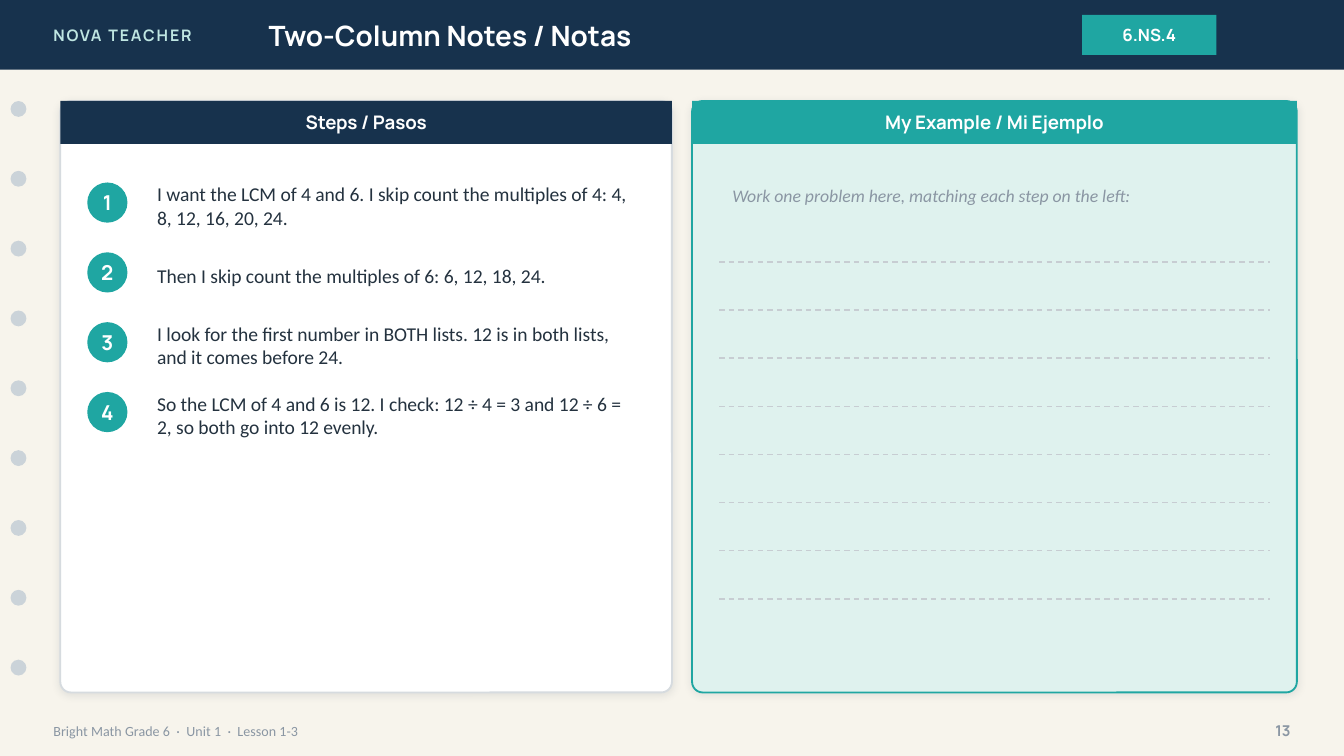
from lxml.etree import SubElement
from pptx import Presentation
from pptx.dml.color import RGBColor
from pptx.enum.dml import MSO_LINE
from pptx.enum.shapes import MSO_CONNECTOR, MSO_SHAPE
from pptx.enum.text import MSO_ANCHOR, PP_ALIGN
from pptx.oxml.ns import qn
from pptx.util import Cm, Pt

NAVY, TEAL, MINT, WHITE = "17324D", "1FA6A2", "DFF2EE", "FFFFFF"
GREY, INK, RULE = "8A96A3", "24323F", "C7CDD2"
HEAD, BODY = "Manrope", "Calibri"

STEPS = [
    "I want the LCM of 4 and 6. I skip count the multiples of 4: 4, 8, 12, 16, 20, 24.",
    "Then I skip count the multiples of 6: 6, 12, 18, 24.",
    "I look for the first number in BOTH lists. 12 is in both lists, and it comes before 24.",
    "So the LCM of 4 and 6 is 12. I check: 12 ÷ 4 = 3 and 12 ÷ 6 = 2, so both go into 12 evenly.",
]


def rgb(value):
    return RGBColor.from_string(value)


class NotesSlide:
    """Draws on one slide; all positions and sizes are in centimetres."""

    def __init__(self, prs, background):
        self.s = prs.slides.add_slide(prs.slide_layouts[6])
        fill = self.s.background.fill
        fill.solid()
        fill.fore_color.rgb = rgb(background)

    def set_text(self, sp, text, size, color, font=HEAD, bold=True, italic=False,
                 align=PP_ALIGN.LEFT):
        tf = sp.text_frame
        tf.word_wrap = True
        tf.vertical_anchor = MSO_ANCHOR.MIDDLE
        p = tf.paragraphs[0]
        p.text = text
        p.alignment = align
        p.font.name, p.font.size = font, Pt(size)
        p.font.bold, p.font.italic = bold, italic
        p.font.color.rgb = rgb(color)
        return p

    def text(self, x, y, w, h, text, size, color, **style):
        sp = self.s.shapes.add_textbox(Cm(x), Cm(y), Cm(w), Cm(h))
        return self.set_text(sp, text, size, color, **style)

    def shape(self, kind, x, y, w, h, fill, line=None):
        sp = self.s.shapes.add_shape(kind, Cm(x), Cm(y), Cm(w), Cm(h))
        sp.shadow.inherit = False
        sp.fill.solid()
        sp.fill.fore_color.rgb = rgb(fill)
        if line:
            sp.line.color.rgb = rgb(line)
            sp.line.width = Pt(1)
        else:
            sp.line.fill.background()
        return sp

    def label(self, x, y, w, h, fill, text, size, kind=MSO_SHAPE.RECTANGLE):
        """Filled shape with centred white text."""
        sp = self.shape(kind, x, y, w, h, fill)
        self.set_text(sp, text, size, WHITE, align=PP_ALIGN.CENTER)
        tf = sp.text_frame
        tf.margin_left = tf.margin_right = tf.margin_top = tf.margin_bottom = 0

    def soft_shadow(self, sp):
        effects = sp._element.spPr.find(qn("a:effectLst"))
        shadow = SubElement(effects, qn("a:outerShdw"), blurRad=str(Pt(4)),
                            dist=str(Pt(1)), dir="5400000", algn="bl", rotWithShape="0")
        color = SubElement(shadow, qn("a:srgbClr"), val="1C2E42")
        SubElement(color, qn("a:alpha"), val="10000")

    def card(self, x, w, fill, line, header_fill, title):
        top = 1.91
        sp = self.shape(MSO_SHAPE.ROUNDED_RECTANGLE, x, top, w, 11.18, fill, line)
        sp.adjustments[0] = 0.018
        self.soft_shadow(sp)
        self.label(x, top, w, 0.81, header_fill, title, 10)

    def step(self, y, number, text):
        self.label(1.65, y, 0.76, 0.76, TEAL, str(number), 11, MSO_SHAPE.OVAL)
        self.text(2.72, y - 0.15, 9.6, 1.17, text, 10.5, INK, font=BODY, bold=False)

    def writing_line(self, x1, x2, y):
        line = self.s.shapes.add_connector(MSO_CONNECTOR.STRAIGHT, Cm(x1), Cm(y), Cm(x2), Cm(y))
        line.line.color.rgb = rgb(RULE)
        line.line.width = Pt(0.75)
        line.line.dash_style = MSO_LINE.DASH
        SubElement(line._element.spPr, qn("a:effectLst"))


def main():
    prs = Presentation()
    prs.slide_width, prs.slide_height = Cm(25.4), Cm(14.29)
    notes = NotesSlide(prs, "F7F4EC")

    notes.shape(MSO_SHAPE.RECTANGLE, 0, 0, 25.4, 1.32, NAVY)
    author = notes.text(0.76, 0, 6.1, 1.32, "NOVA TEACHER", 8.5, "BFE6E2")
    author.runs[0].font._element.set("spc", "100")
    notes.text(4.83, 0, 14.22, 1.32, "Two-Column Notes / Notas", 15, WHITE)
    notes.label(20.45, 0.28, 2.54, 0.76, TEAL, "6.NS.4", 9)

    pitch = 1.32
    for i in range(9):
        notes.shape(MSO_SHAPE.OVAL, 0.2, 1.91 + i * pitch, 0.3, 0.3, "CBD3D9")

    notes.text(0.76, 13.46, 17.78, 0.71, "Bright Math Grade 6  ·  Unit 1  ·  Lesson 1-3",
               7.5, GREY, font=BODY, bold=False)
    notes.text(23.37, 13.46, 1.27, 0.71, "13", 8, GREY, align=PP_ALIGN.RIGHT)

    notes.card(1.14, 11.56, WHITE, "D6DBDF", NAVY, "Steps / Pasos")
    for i, text in enumerate(STEPS):
        notes.step(3.45 + i * pitch, i + 1, text)

    notes.card(13.08, 11.43, MINT, TEAL, TEAL, "My Example / Mi Ejemplo")
    notes.text(13.59, 3.18, 10.41, 1.02, "Work one problem here, matching each step on the left:",
               9.5, GREY, font=BODY, bold=False, italic=True)
    for i in range(8):
        notes.writing_line(13.59, 24, 4.95 + i * 0.91)

    prs.save("out.pptx")


if __name__ == "__main__":
    main()
